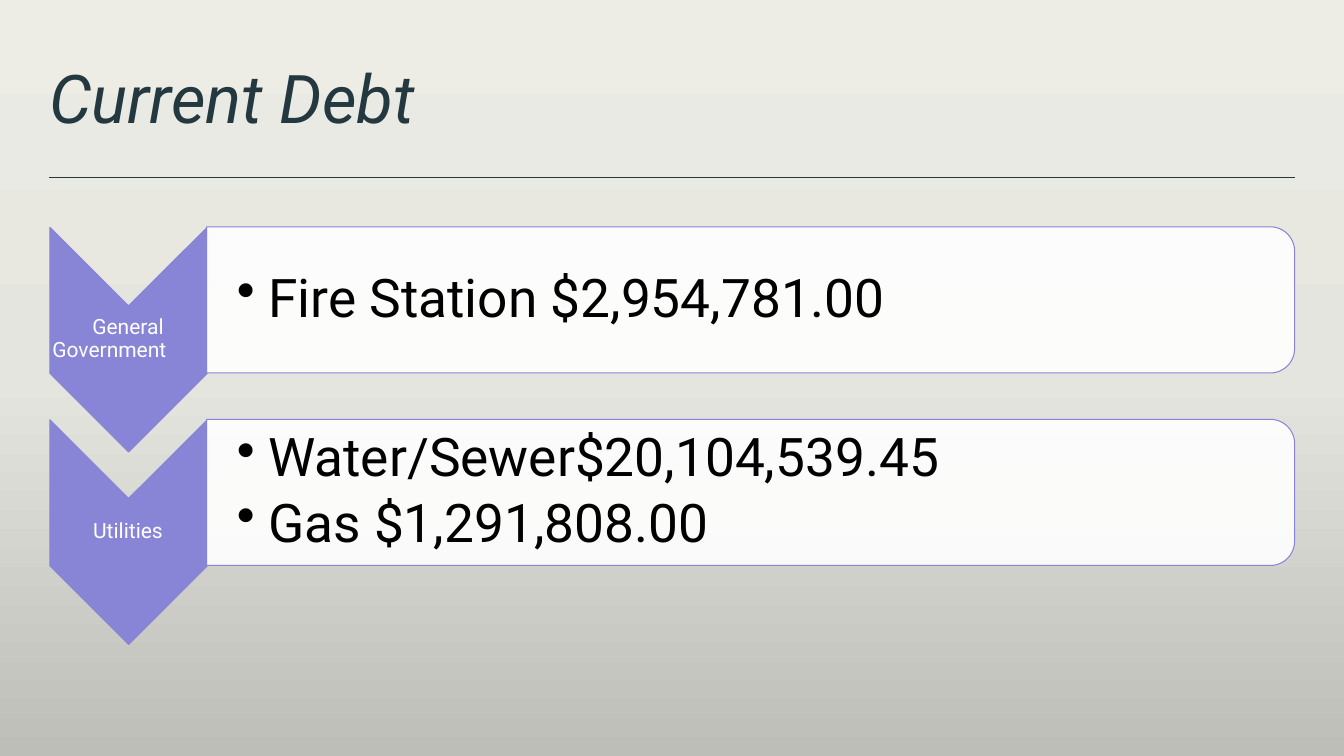
from copy import deepcopy

from lxml import etree
from pptx import Presentation
from pptx.dml.color import RGBColor
from pptx.enum.dml import MSO_FILL
from pptx.enum.shapes import MSO_CONNECTOR, MSO_SHAPE
from pptx.enum.text import MSO_ANCHOR, PP_ALIGN
from pptx.oxml.ns import qn
from pptx.util import Inches, Pt

CHEVRON, PANEL = MSO_SHAPE.CHEVRON, MSO_SHAPE.ROUND_2_SAME_RECTANGLE
STRAIGHT = MSO_CONNECTOR.STRAIGHT
MIDDLE, BOTTOM = MSO_ANCHOR.MIDDLE, MSO_ANCHOR.BOTTOM
LEFT, CENTER = PP_ALIGN.LEFT, PP_ALIGN.CENTER
GRADIENT = MSO_FILL.GRADIENT

FONT = "Roboto"
COLORS = {"title": "24393F", "accent": "8885D7", "white": "FFFFFF", "text": "000000",
          "bg_top": "EDEDE6", "bg_middle": "E5E5DF", "bg_bottom": "BEBEB8"}

DEBTS = [
    ("General Government \t", ["Fire Station $2,954,781.00"]),
    ("Utilities", ["Water/Sewer$20,104,539.45", "Gas $1,291,808.00"]),
]
ROW_PITCH = 1.91


def rgb(name):
    return RGBColor.from_string(COLORS[name])


class DebtSlide:
    def __init__(self, prs):
        self.s = prs.slides.add_slide(prs.slide_layouts[5])

    def background(self):
        fill = self.s.background.fill
        fill.gradient()
        fill.gradient_angle = 270
        first = self.s.background._cSld.find(".//" + qn("a:gs"))
        first.addnext(deepcopy(first))
        names = ("bg_top", "bg_middle", "bg_bottom")
        for stop, name, position in zip(fill.gradient_stops, names, (0, 0.5, 1)):
            stop.color.rgb = rgb(name)
            stop.position = position

    def format_text(self, tf, size, color, anchor, insets, align=LEFT, after=0):
        tf.word_wrap = True
        tf.vertical_anchor = anchor
        tf.margin_left = Inches(insets[0])
        tf.margin_top = tf.margin_right = tf.margin_bottom = Inches(insets[1])
        for p in tf.paragraphs:
            p.alignment = align
            p.line_spacing = 0.9
            p.space_before = Pt(0)
            p.space_after = Pt(after)
            for r in p.runs:
                r.font.name = FONT
                r.font.size = Pt(size)
                r.font.color.rgb = rgb(color)

    def title(self, text, x, y, w, h):
        sp = self.s.shapes.title
        sp.left, sp.top, sp.width, sp.height = map(Inches, (x, y, w, h))
        sp.text_frame.text = text
        self.format_text(sp.text_frame, 48, "title", BOTTOM, (0, 0))
        sp.text_frame.paragraphs[0].runs[0].font.italic = True

    def rule(self, x1, x2, y):
        line = self.s.shapes.add_connector(STRAIGHT, Inches(x1), Inches(y), Inches(x2), Inches(y))
        line.line.color.rgb = rgb("title")
        line.line.width = Pt(0.5)
        etree.SubElement(line._element.spPr, qn("a:effectLst"))

    def turned_shape(self, kind, x, y, w, h, fill, opacity=100):
        """Add a shape turned by 90 degrees; the box is given before the turn."""
        sp = self.s.shapes.add_shape(kind, *map(Inches, (x, y, w, h)))
        sp.rotation = 90
        sp.shadow.inherit = False
        sp.fill.solid()
        sp.fill.fore_color.rgb = rgb(fill)
        if opacity < 100:
            color = sp._element.spPr.find(qn("a:solidFill"))[0]
            etree.SubElement(color, qn("a:alpha"), val=str(opacity * 1000))
        sp.line.color.rgb = rgb("accent")
        sp.line.width = Pt(0.75)

    def label(self, text, x, y, w, h):
        tf = self.s.shapes.add_textbox(*map(Inches, (x, y, w, h))).text_frame
        tf.text = text
        self.format_text(tf, 15, "white", MIDDLE, (0.01, 0.01), CENTER, 5)

    def bullets(self, items, x, y, w, h):
        tf = self.s.shapes.add_textbox(*map(Inches, (x, y, w, h))).text_frame
        tf.text = "\n".join(items)
        self.format_text(tf, 38, "text", MIDDLE, (0.3, 0.03), after=5.7)
        for p in tf.paragraphs:
            pPr = p._p.get_or_add_pPr()
            pPr.set("marL", str(Inches(0.31)))
            pPr.set("indent", str(Inches(-0.31)))
            etree.SubElement(pPr, qn("a:buChar"), char="•")

    def debt_row(self, name, items, offset):
        self.turned_shape(CHEVRON, 0.16, 2.59 + offset, 2.23, 1.56, "accent")
        self.label(name, 0.49, 3.03 + offset, 1.56, 0.67)
        self.turned_shape(PANEL, 6.72, -2.42 + offset, 1.45, 10.79, "white", 90)
        self.bullets(items, 2.05, 2.32 + offset, 10.72, 1.31)


def main():
    prs = Presentation()
    prs.slide_width, prs.slide_height = Inches(13.33), Inches(7.5)
    slide = DebtSlide(prs)
    slide.background()
    slide.title("Current Debt", 0.49, 0.43, 12.36, 0.94)
    slide.rule(0.49, 12.84, 1.76)
    for i, (name, items) in enumerate(DEBTS):
        slide.debt_row(name, items, i * ROW_PITCH)
    prs.save("out.pptx")


if __name__ == "__main__":
    main()
